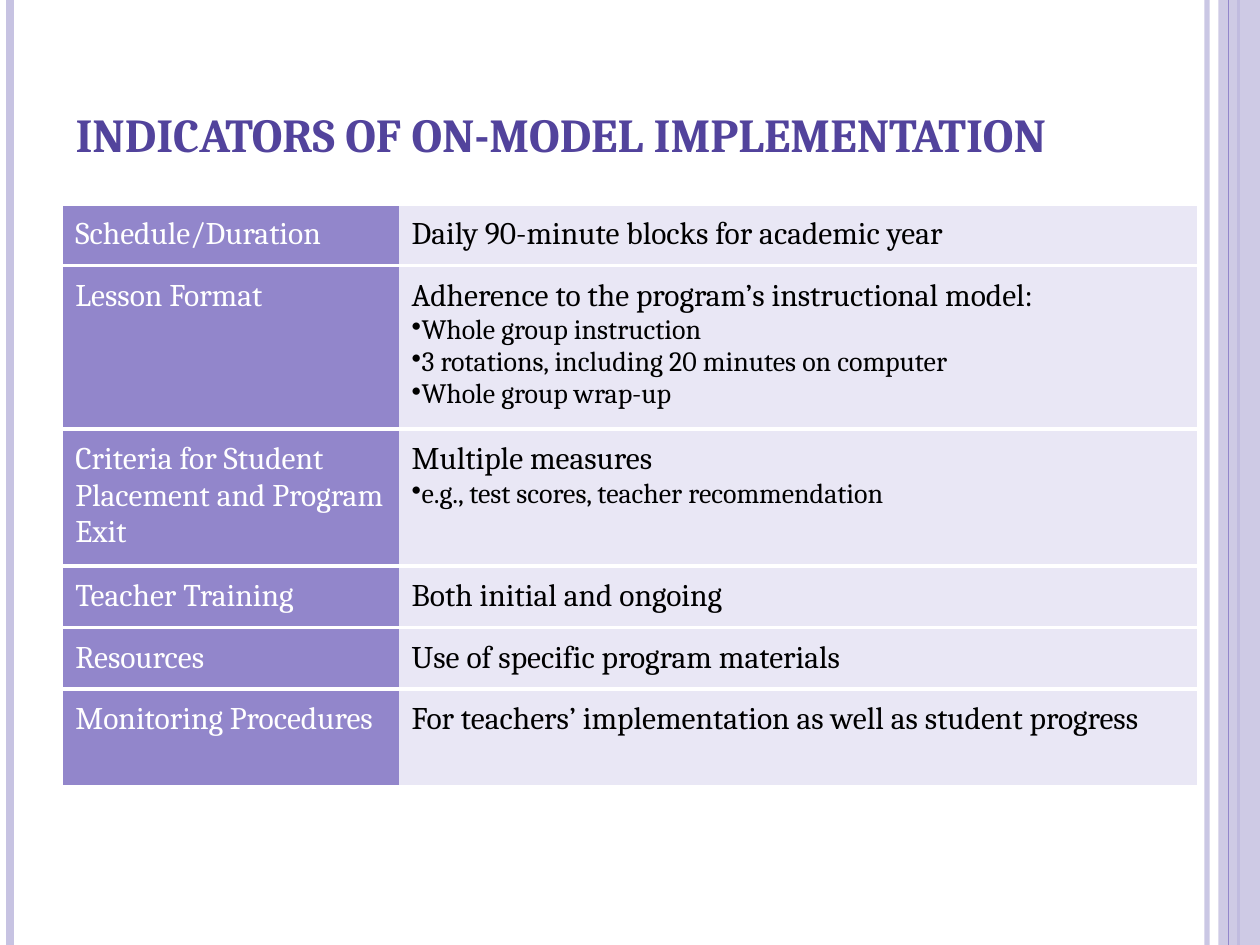
from lxml.etree import SubElement
from pptx import Presentation
from pptx.dml.color import RGBColor
from pptx.enum.shapes import MSO_CONNECTOR as CONN, MSO_SHAPE as SHAPE
from pptx.enum.text import MSO_ANCHOR as ANCHOR, PP_ALIGN as ALIGN
from pptx.oxml import parse_xml
from pptx.oxml.ns import nsdecls, qn
from pptx.util import Cm, Pt

WHITE, BLACK, PURPLE = "FFFFFF", "000000", "9286CB"
LILAC, PALE, DEEP = "C7C3E2", "E9E7F5", "52439C"


def rgb(value):
    return RGBColor.from_string(value)


def style(font, size, color, bold=False):
    values = {"name": "Cambria", "size": Pt(size), "bold": bold}
    for key, value in values.items():
        setattr(font, key, value)
    font.color.rgb = rgb(color)


prs = Presentation()
prs.slide_width, prs.slide_height = Cm(25.4), Cm(19.05)
s = prs.slides.add_slide(prs.slide_layouts[5])

sp = s.shapes.add_shape(SHAPE.RECTANGLE, Cm(24.56), 0, Cm(0.84), prs.slide_height)
sp.shadow.inherit = False
sp.fill.solid()
sp.fill.fore_color.rgb = rgb(LILAC)
sp.line.fill.background()
SubElement(sp.fill._xPr.find(".//" + qn("a:srgbClr")), qn("a:alpha"), val="87000")

stripes = [
    (24.33, LILAC, 3, 93),
    (0.2, LILAC, 4.5, 100),
    (24.97, PURPLE, 1.5, 100),
    (24.77, PURPLE, 0.75, 100),
]
for x, color, width, alpha in stripes:
    line = s.shapes.add_connector(CONN.STRAIGHT, Cm(x), 0, Cm(x), prs.slide_height)
    line.line.color.rgb = rgb(color)
    line.line.width = Pt(width)
    spPr = line._element.spPr
    if alpha < 100:
        SubElement(spPr.find(".//" + qn("a:srgbClr")), qn("a:alpha"), val=str(alpha * 1000))
    SubElement(spPr, qn("a:effectLst"))
    if color == PURPLE and width < 1:
        s.shapes._spTree.remove(sp._element)
        line._element.addprevious(sp._element)

title = s.shapes.title
box = {"left": Cm(1.27), "top": Cm(0.76), "width": Cm(20.75), "height": Cm(2.64)}
for key, value in box.items():
    setattr(title, key, value)
tf = title.text_frame
tf.word_wrap = True
tf.vertical_anchor = ANCHOR.BOTTOM
p = tf.paragraphs[0]
p.alignment = ALIGN.LEFT
r = p.add_run()
r.text = "INDICATORS OF ON-MODEL IMPLEMENTATION"
style(r.font, 27, DEEP, bold=True)

rows = [
    (1.24, "Schedule/Duration", ["Daily 90-minute blocks for academic year"]),
    (3.3, "Lesson Format", [
        "Adherence to the program’s instructional model:",
        "Whole group instruction",
        "3 rotations, including 20 minutes on computer",
        "Whole group wrap-up",
    ]),
    (2.76, "Criteria for Student Placement and Program Exit", [
        "Multiple measures",
        "e.g., test scores, teacher recommendation",
    ]),
    (1.24, "Teacher Training", ["Both initial and ongoing"]),
    (1.24, "Resources", ["Use of specific program materials"]),
    (1.98, "Monitoring Procedures", ["For teachers’ implementation as well as student progress"]),
]
height = sum(row[0] for row in rows)
table = s.shapes.add_table(len(rows), 2, Cm(1.27), Cm(4.11), Cm(22.86), Cm(height)).table
table.first_row = table.horz_banding = False
table.columns[0].width, table.columns[1].width = Cm(6.78), Cm(16.08)

white_line = f'<a:solidFill><a:srgbClr val="{WHITE}"/></a:solidFill>'
borders = [("lnL", 0, "<a:noFill/>"), ("lnR", 0, "<a:noFill/>"),
           ("lnT", Pt(2.25), white_line), ("lnB", Pt(2.25), white_line)]
margins = ("margin_left", "margin_right", "margin_top", "margin_bottom")

for i, (row_height, label, details) in enumerate(rows):
    table.rows[i].height = Cm(row_height)
    columns = [([label], PURPLE, WHITE), (details, PALE, BLACK)]
    for j, (lines, fill, color) in enumerate(columns):
        cell = table.cell(i, j)
        cell.fill.solid()
        cell.fill.fore_color.rgb = rgb(fill)
        for margin in margins:
            setattr(cell, margin, Cm(0.25))
        tcPr = cell._tc.get_or_add_tcPr()
        for n, (tag, width, paint) in enumerate(borders):
            tcPr.insert(n, parse_xml(f'<a:{tag} {nsdecls("a")} w="{width}">{paint}</a:{tag}>'))
        tf = cell.text_frame
        for n, text in enumerate(lines):
            p = tf.add_paragraph() if n else tf.paragraphs[0]
            r = p.add_run()
            r.text = text
            style(r.font, 16 if n else 18, color)
            if n:
                SubElement(p._p.get_or_add_pPr(), qn("a:buChar"), char="•")

prs.save("out.pptx")
